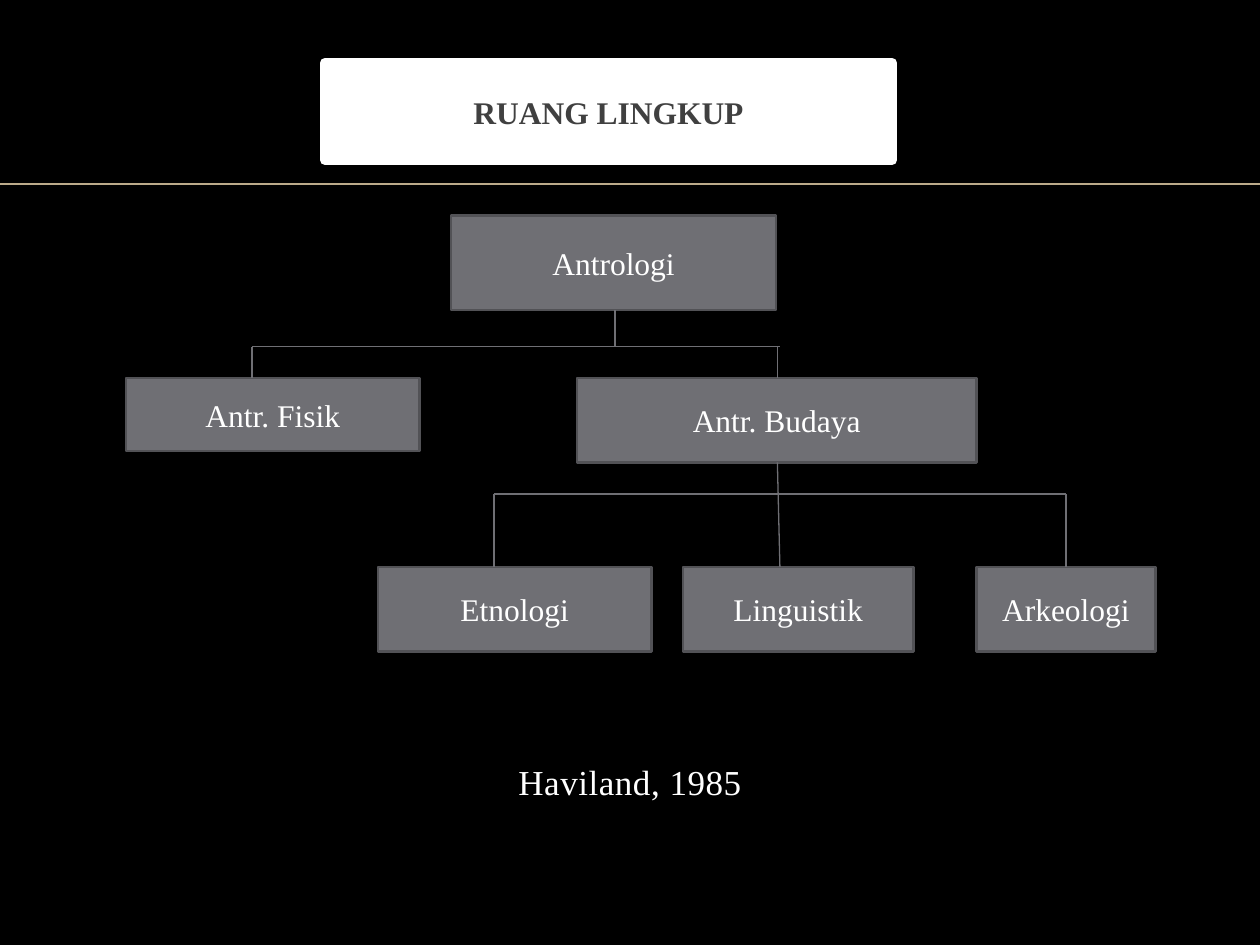
from lxml import etree
from pptx import Presentation
from pptx.dml.color import RGBColor
from pptx.enum import shapes, text
from pptx.oxml.ns import qn
from pptx.util import Inches, Pt

# Content
TITLE = "RUANG LINGKUP"
SOURCE = "Haviland, 1985"
FONT = "Times New Roman"
GREY, EDGE, WHITE, GOLD = "6F6F74", "525256", "FFFFFF", "BBAA8A"

# label, (left, top, width, height)
BOXES = [
    ("Antrologi", (3.58, 1.71, 2.58, 0.75)),
    ("Antr. Fisik", (1, 3, 2.33, 0.58)),
    ("Antr. Budaya", (4.58, 3, 3.17, 0.67)),
    ("Etnologi", (3, 4.5, 2.17, 0.67)),
    ("Linguistik", (5.42, 4.5, 1.83, 0.67)),
    ("Arkeologi", (7.75, 4.5, 1.42, 0.67)),
]

# Branches: stem (x, top, x end, bottom), bar (left, right, y), drops (xs, bottom)
BRANCHES = [
    {"stem": (4.88, 2.46, 4.88, 2.75), "bar": (2, 6.19, 2.75), "drops": ((2, 6.17), 3)},
    {"stem": (6.17, 3.67, 6.19, 4.5), "bar": (3.92, 8.46, 3.92), "drops": ((3.92, 8.46), 4.5)},
]


def rgb(color):
    return RGBColor.from_string(color)


def place(shape, box):
    shape.left, shape.top, shape.width, shape.height = map(Inches, box)


def paint(shape, fill, line, width):
    shape.fill.solid()
    shape.fill.fore_color.rgb = rgb(fill)
    shape.line.color.rgb = rgb(line)
    shape.line.width = Pt(width)


def write(shape, words, size=18, color=WHITE, bold=False, anchor=text.MSO_ANCHOR.MIDDLE):
    frame = shape.text_frame
    frame.word_wrap = True
    frame.auto_size = text.MSO_AUTO_SIZE.NONE
    frame.vertical_anchor = anchor
    paragraph = frame.paragraphs[0]
    paragraph.alignment = text.PP_ALIGN.CENTER
    run = paragraph.add_run()
    run.text = words
    run.font.name, run.font.size, run.font.bold = FONT, Pt(size), bold
    run.font.color.rgb = rgb(color)
    return paragraph, run


def draw_line(slide, x1, y1, x2, y2, color=GREY, width=0.75):
    line = slide.shapes.add_connector(
        shapes.MSO_CONNECTOR.STRAIGHT, *map(Inches, (x1, y1, x2, y2)))
    line.line.color.rgb = rgb(color)
    line.line.width = Pt(width)
    etree.SubElement(line._element.spPr, qn("a:effectLst"))


def main():
    prs = Presentation()
    prs.slide_width, prs.slide_height = Inches(10), Inches(7.5)
    slide = prs.slides.add_slide(prs.slide_layouts[1])
    slide.background.fill.solid()
    slide.background.fill.fore_color.rgb = rgb("000000")

    # Title and the rule below it
    title, source = slide.placeholders
    place(title, (2.58, 0.5, 4.5, 0.77))
    paint(title, WHITE, WHITE, 6)
    write(title, TITLE, color="404040", bold=True)
    draw_line(slide, 0, 1.46, 10, 1.46, GOLD, 1)

    # Source, at the foot of the body
    place(source, (0.5, 2.21, 9, 4.46))
    source.text_frame.margin_bottom = Inches(0.3)
    paragraph, run = write(source, SOURCE, size=20, anchor=text.MSO_ANCHOR.BOTTOM)
    run.font._element.set("spc", "30")
    properties = paragraph._p.get_or_add_pPr()
    properties.set("marL", "0")
    properties.set("indent", "0")
    etree.SubElement(properties, qn("a:buNone"))

    # Boxes of the tree
    for label, position in BOXES:
        box = slide.shapes.add_shape(
            shapes.MSO_SHAPE.RECTANGLE, *map(Inches, position))
        box.shadow.inherit = False
        paint(box, GREY, EDGE, 1.5)
        write(box, label)

    # Lines of the tree
    for branch in BRANCHES:
        left, right, y = branch["bar"]
        drops, bottom = branch["drops"]
        draw_line(slide, *branch["stem"])
        draw_line(slide, left, y, right, y)
        for x in drops:
            draw_line(slide, x, y, x, bottom)

    prs.save("out.pptx")


if __name__ == "__main__":
    main()
